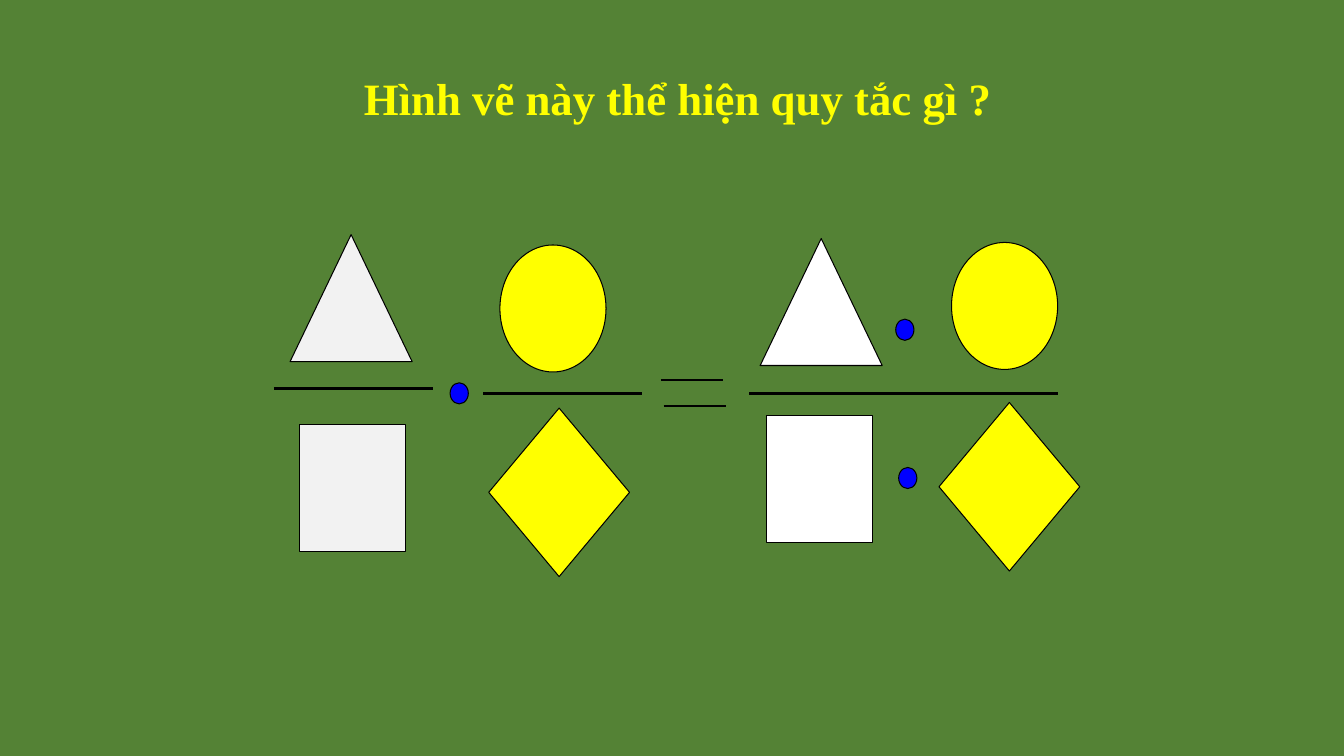
from pptx import Presentation
from pptx.dml.color import RGBColor
from pptx.enum.shapes import MSO_CONNECTOR, MSO_SHAPE as SHAPE
from pptx.enum.text import MSO_ANCHOR, MSO_AUTO_SIZE, PP_ALIGN
from pptx.oxml.ns import qn
from pptx.util import Pt
from lxml.etree import SubElement

GREEN = RGBColor(0x54, 0x82, 0x35)
YELLOW = RGBColor(0xFF, 0xFF, 0x00)
BLUE = RGBColor(0x00, 0x00, 0xFF)
GREY = RGBColor(0xF2, 0xF2, 0xF2)
WHITE = RGBColor(0xFF, 0xFF, 0xFF)
BLACK = RGBColor(0x00, 0x00, 0x00)

SIZES = {
    SHAPE.ISOSCELES_TRIANGLE: (87.2, 90.7),
    SHAPE.RECTANGLE: (75.8, 90.7),
    SHAPE.OVAL: (75.8, 90.7),
    SHAPE.DIAMOND: (100.6, 120.4),
}
DOT_SIZE = (13, 15.1)


class FractionSlide:
    """Draws the title, symbols and bars of a fraction rule on one slide."""

    font = "Times New Roman"
    outline = 0.75

    def __init__(self, prs):
        self.s = prs.slides.add_slide(prs.slide_layouts[5])
        fill = self.s.background.fill
        fill.solid()
        fill.fore_color.rgb = GREEN

    def title(self, text, x, y, w, h):
        sp = self.s.shapes.title
        sp.left, sp.top, sp.width, sp.height = Pt(x), Pt(y), Pt(w), Pt(h)
        tf = sp.text_frame
        tf.word_wrap = True
        tf.auto_size = MSO_AUTO_SIZE.NONE
        tf.vertical_anchor = MSO_ANCHOR.TOP
        p = tf.paragraphs[0]
        p.alignment = PP_ALIGN.CENTER
        p.space_before = Pt(2)
        r = p.add_run()
        r.text = text
        r.font.name, r.font.size, r.font.bold = self.font, Pt(32), True
        r.font.color.rgb = YELLOW

    def symbol(self, kind, x, y, color, size=None):
        w, h = size or SIZES[kind]
        sp = self.s.shapes.add_shape(kind, Pt(x), Pt(y), Pt(w), Pt(h))
        sp.shadow.inherit = False
        sp.fill.solid()
        sp.fill.fore_color.rgb = color
        sp.line.color.rgb = BLACK
        sp.line.width = Pt(self.outline)

    def dot(self, x, y):
        self.symbol(SHAPE.OVAL, x, y, BLUE, DOT_SIZE)

    def bar(self, x, y, length, weight=2.25):
        ln = self.s.shapes.add_connector(
            MSO_CONNECTOR.STRAIGHT, Pt(x), Pt(y), Pt(x + length), Pt(y))
        ln.line.color.rgb = BLACK
        ln.line.width = Pt(weight)
        SubElement(ln._element.spPr, qn("a:effectLst"))


def main():
    prs = Presentation()
    prs.slide_width, prs.slide_height = Pt(960), Pt(540)
    s = FractionSlide(prs)
    s.title("Hình vẽ này thể hiện quy tắc gì ?", 251.3, 46.8, 465.8, 46.1)

    for kind, x, y, color in (
        (SHAPE.ISOSCELES_TRIANGLE, 207.2, 167.6, GREY),
        (SHAPE.RECTANGLE, 213.8, 303.2, GREY),
        (SHAPE.OVAL, 357.1, 175, YELLOW),
        (SHAPE.DIAMOND, 349.1, 291.5, YELLOW),
        (SHAPE.ISOSCELES_TRIANGLE, 543, 170.4, WHITE),
        (SHAPE.RECTANGLE, 547.4, 296.7, WHITE),
        (SHAPE.OVAL, 679.7, 173.2, YELLOW),
        (SHAPE.DIAMOND, 670.7, 287.5, YELLOW),
    ):
        s.symbol(kind, x, y, color)

    for x, y in ((321.5, 273.4), (639.8, 228), (641.9, 333.9)):
        s.dot(x, y)

    for x, y, length in ((195.6, 277.6, 113.4), (345.2, 281, 113.4),
                         (535.2, 281, 220.6)):
        s.bar(x, y, length)

    for x, y in ((472, 271.4), (474, 289.9)):
        s.bar(x, y, 44.3, 1.5)

    prs.save("out.pptx")


if __name__ == "__main__":
    main()
